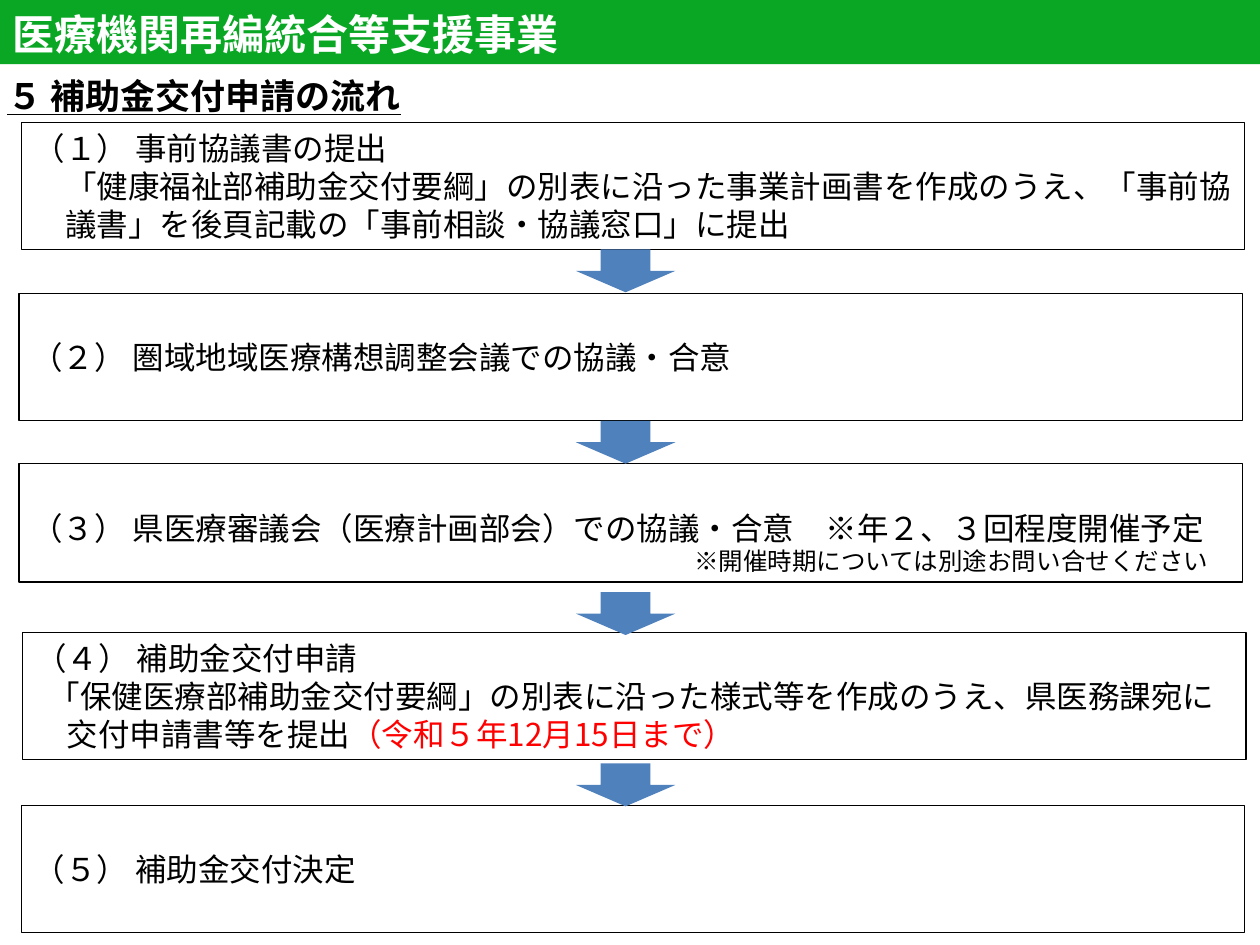
from dataclasses import dataclass
from pptx import Presentation
from pptx.dml.color import RGBColor
from pptx.enum.shapes import MSO_SHAPE
from pptx.enum.text import MSO_ANCHOR, MSO_AUTO_SIZE, PP_ALIGN
from pptx.oxml.ns import qn
from pptx.util import Inches, Pt
from lxml import etree


@dataclass
class Theme:
    font: str = "Noto Sans CJK JP"
    green: RGBColor = RGBColor(0x09, 0xA7, 0x23)
    blue: RGBColor = RGBColor(0x4F, 0x81, 0xBD)
    black: RGBColor = RGBColor(0, 0, 0)
    white: RGBColor = RGBColor(255, 255, 255)
    red: RGBColor = RGBColor(255, 0, 0)
    title: int = 24
    head: int = 20
    body: int = 18
    note: int = 14


theme = Theme()


def style(run, size, color, bold=False):
    font = run.font
    font.size, font.bold, font.name = Pt(size), bold, theme.font
    font.color.rgb = color
    east = etree.SubElement(run._r.get_or_add_rPr(), qn("a:ea"))
    east.set("typeface", theme.font)


def place(shape, left, top, width, height):
    shape.left, shape.top = Inches(left), Inches(top)
    shape.width, shape.height = Inches(width), Inches(height)


deck = Presentation()
deck.slide_width, deck.slide_height = Inches(10), Inches(7.5)
slide = deck.slides.add_slide(deck.slide_layouts[5])
shapes = slide.shapes

# Title bar
title = shapes.title
place(title, 0, 0, 10, 0.51)
title.fill.solid()
title.fill.fore_color.rgb = theme.green
frame = title.text_frame
frame.text = "医療機関再編統合等支援事業"
frame.auto_size = MSO_AUTO_SIZE.NONE
frame.vertical_anchor = MSO_ANCHOR.MIDDLE
frame.margin_top = frame.margin_bottom = 0
para = frame.paragraphs[0]
para.alignment = PP_ALIGN.LEFT
para.line_spacing = Pt(31)
style(para.runs[0], theme.title, theme.white, True)

# Section heading
head = shapes.add_textbox(Inches(-0.04), Inches(0.54), Inches(8.58), Inches(0.44))
frame = head.text_frame
frame.word_wrap = True
frame.text = "５ 補助金交付申請の流れ"
run = frame.paragraphs[0].runs[0]
style(run, theme.head, theme.black, True)
run.font.underline = True

# Steps: left, top, height, anchor, lines of (indent, size, text, red text)
mid, low = MSO_ANCHOR.MIDDLE, MSO_ANCHOR.BOTTOM
steps = [
    (0.17, 0.97, 1.01, mid, [
        (0, theme.body, "（１） 事前協議書の提出", ""),
        (0.25, theme.body, "「健康福祉部補助金交付要綱」の別表に沿った事業計画書を作成のうえ、「事前協", ""),
        (0.25, theme.body, "議書」を後頁記載の「事前相談・協議窓口」に提出", "")]),
    (0.15, 2.33, 1.01, mid, [
        (0, theme.body, "（２） 圏域地域医療構想調整会議での協議・合意", "")]),
    (0.15, 3.68, 0.94, low, [
        (0, theme.body, "（３） 県医療審議会（医療計画部会）での協議・合意　※年２、３回程度開催予定", ""),
        (5.26, theme.note, "※開催時期については別途お問い合せください", "")]),
    (0.18, 5.02, 1.01, mid, [
        (0, theme.body, "（４） 補助金交付申請", ""),
        (0.11, theme.body, "「保健医療部補助金交付要綱」の別表に沿った様式等を作成のうえ、県医務課宛に", ""),
        (0.25, theme.body, "交付申請書等を提出", "（令和５年12月15日まで）")]),
    (0.17, 6.39, 1.01, mid, [
        (0, theme.body, "（５） 補助金交付決定", "")]),
]
for left, top, height, anchor, lines in steps:
    box = shapes.add_shape(MSO_SHAPE.RECTANGLE, Inches(left), Inches(top),
                           Inches(9.71), Inches(height))
    box.shadow.inherit = False
    box.fill.background()
    box.line.color.rgb = theme.black
    box.line.width = Pt(0.75)
    frame = box.text_frame
    frame.word_wrap = True
    frame.vertical_anchor = anchor
    frame.text = "\n".join(line[2] for line in lines)
    for para, (indent, size, text, alert) in zip(frame.paragraphs, lines):
        para.alignment = PP_ALIGN.LEFT
        para._p.get_or_add_pPr().set("marL", str(Inches(indent)))
        style(para.runs[0], size, theme.black)
        if alert:
            run = para.add_run()
            run.text = alert
            style(run, size, theme.red)

# Arrows between the steps
for i in range(4):
    arrow = shapes.add_shape(MSO_SHAPE.DOWN_ARROW, Inches(4.57), Inches(1.98 + 1.36 * i),
                             Inches(0.79), Inches(0.34))
    arrow.shadow.inherit = False
    arrow.fill.solid()
    arrow.fill.fore_color.rgb = theme.blue
    arrow.line.fill.background()

deck.save("out.pptx")
